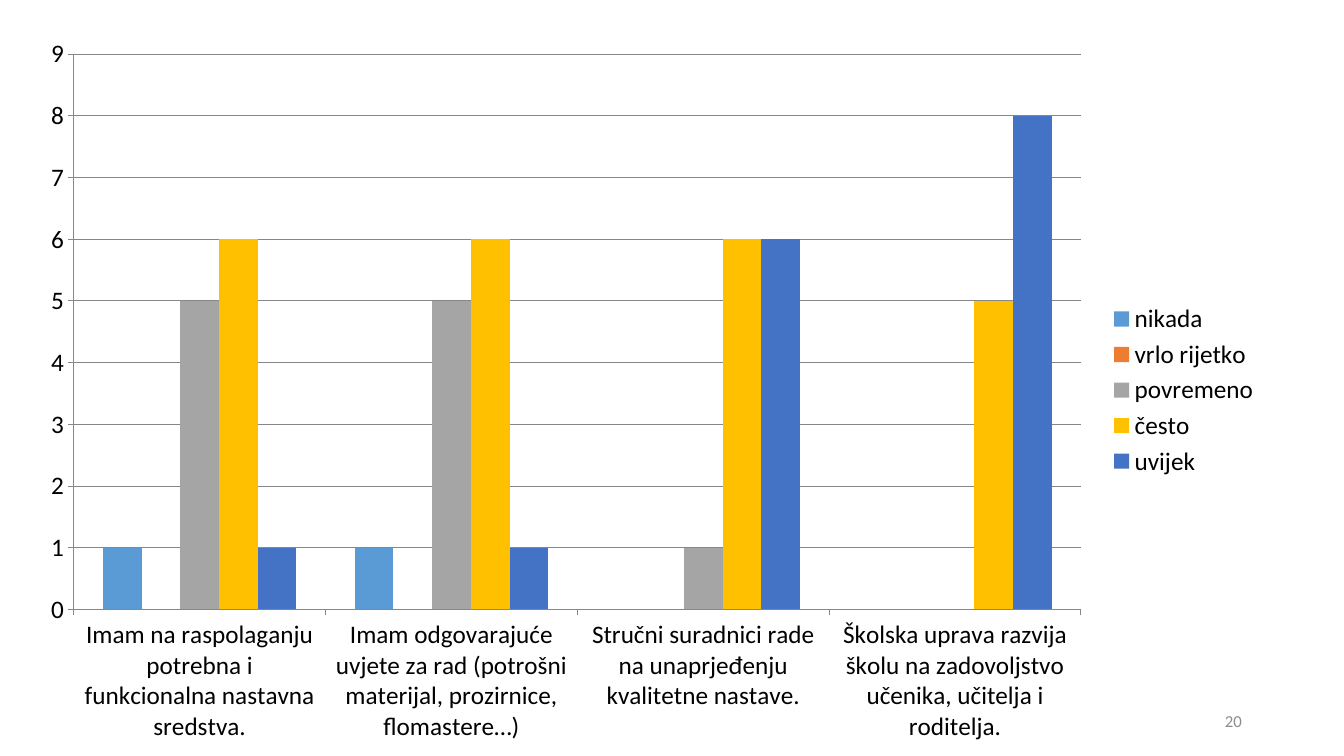
from pptx import Presentation
from pptx import util as u
from pptx.chart.data import CategoryChartData
from pptx.dml.color import RGBColor
from pptx.enum import chart as ch, text

COLORS = {
    "text": "000000",
    "number": "8C8C8C",
    "axis": "878787",
    "nikada": "5B9BD5",
    "vrlo rijetko": "ED7D31",
    "povremeno": "A5A5A5",
    "često": "FFC000",
    "uvijek": "4472C4",
}
STATEMENTS = [
    "Imam na raspolaganju potrebna i funkcionalna nastavna sredstva.",
    "Imam odgovarajuće uvjete za rad (potrošni materijal, prozirnice, flomastere…)",
    "Stručni suradnici rade na unaprjeđenju kvalitetne nastave.",
    "Školska uprava razvija školu na zadovoljstvo učenika, učitelja i roditelja.",
]
ANSWERS = {
    "nikada": (1, 1, None, None),
    "vrlo rijetko": (None, None, None, None),
    "povremeno": (5, 5, 1, None),
    "često": (6, 6, 6, 5),
    "uvijek": (1, 1, 6, 8),
}


def set_attrs(obj, values):
    for name, value in values.items():
        setattr(obj, name, value)


def rgb(name):
    return RGBColor.from_string(COLORS[name])


def format_font(font, size, color):
    set_attrs(font, {"name": "Calibri", "size": u.Pt(size), "bold": False})
    font.color.rgb = rgb(color)


def format_line(line):
    line.color.rgb = rgb("axis")
    line.width = u.Pt(0.75)


def format_axis(axis, values):
    set_attrs(axis, {
        "major_tick_mark": ch.XL_TICK_MARK.OUTSIDE,
        "minor_tick_mark": ch.XL_TICK_MARK.NONE,
        **values,
    })
    format_line(axis.format.line)


def add_answers_chart(slide, box):
    data = CategoryChartData()
    data.categories = STATEMENTS
    for name, values in ANSWERS.items():
        data.add_series(name, values)
    chart = slide.shapes.add_chart(
        ch.XL_CHART_TYPE.COLUMN_CLUSTERED, *map(u.Cm, box), data).chart
    set_attrs(chart, {"has_title": False, "has_legend": True})
    format_font(chart.font, 18, "text")
    set_attrs(chart.legend, {
        "position": ch.XL_LEGEND_POSITION.RIGHT,
        "include_in_layout": False,
    })
    format_axis(chart.category_axis, {"has_major_gridlines": False})
    format_axis(chart.value_axis, {
        "has_major_gridlines": True,
        "minimum_scale": 0,
        "maximum_scale": 9,
        "major_unit": 1,
    })
    format_line(chart.value_axis.major_gridlines.format.line)
    plot = chart.plots[0]
    set_attrs(plot, {"gap_width": 150, "overlap": 0, "vary_by_categories": False})
    for series in plot.series:
        series.format.fill.solid()
        series.format.fill.fore_color.rgb = rgb(series.name)


def add_slide_number(slide, box, number):
    tf = slide.shapes.add_textbox(*map(u.Cm, box)).text_frame
    set_attrs(tf, {"word_wrap": True, "vertical_anchor": text.MSO_ANCHOR.MIDDLE})
    p = tf.paragraphs[0]
    p.alignment = text.PP_ALIGN.RIGHT
    r = p.add_run()
    r.text = number
    format_font(r.font, 12, "number")


def main():
    prs = Presentation()
    set_attrs(prs, {"slide_width": u.Cm(33.87), "slide_height": u.Cm(19.05)})
    slide = prs.slides.add_slide(prs.slide_layouts[6])
    add_answers_chart(slide, (0.66, 0.61, 31.34, 18.44))
    add_slide_number(slide, (23.93, 17.65, 7.62, 1.02), "20")
    prs.save("out.pptx")


if __name__ == "__main__":
    main()
